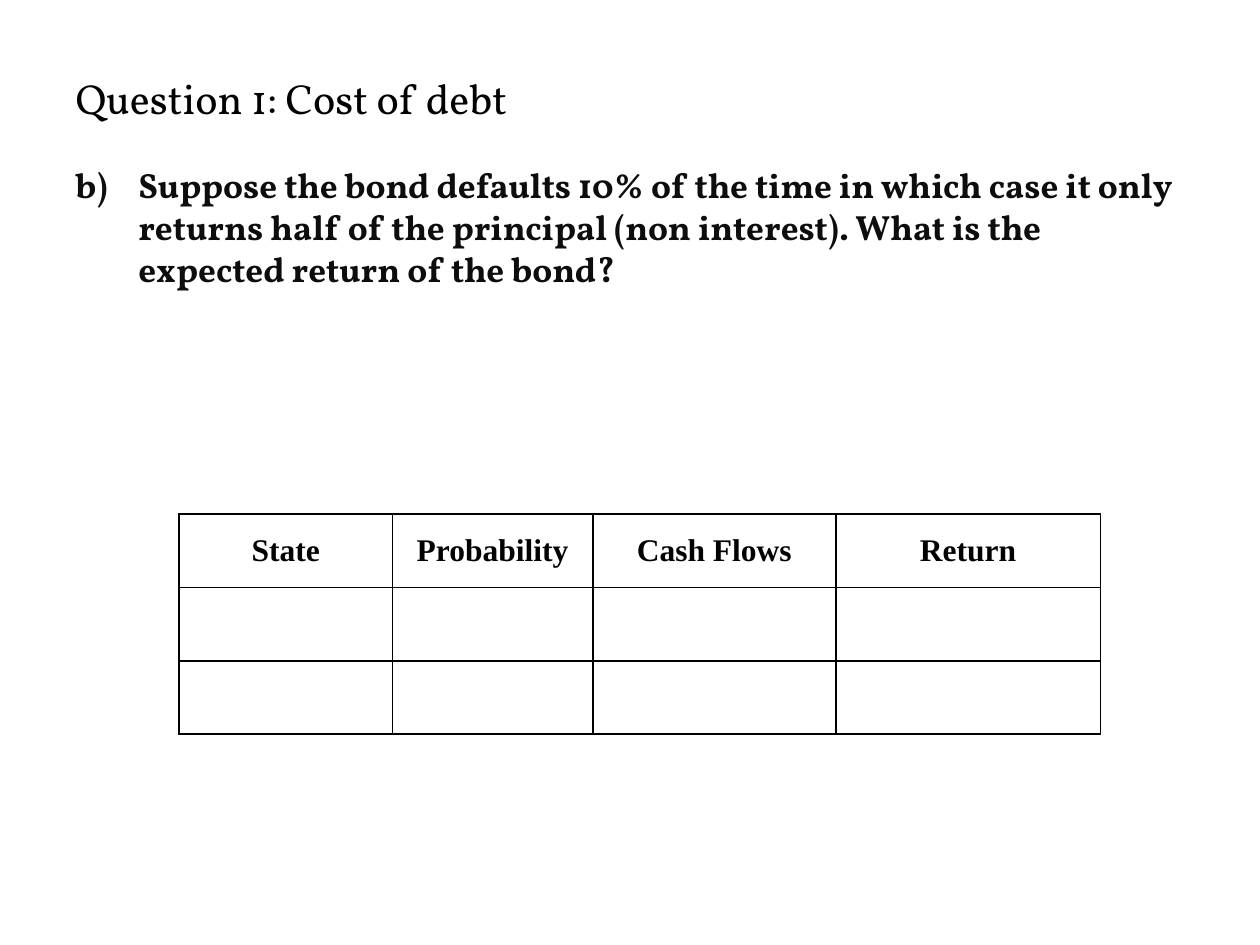
"""Build the cost of debt question slide with its blank answer table."""
from dataclasses import dataclass

from lxml.etree import SubElement
from pptx import Presentation
from pptx.dml.color import RGBColor
from pptx.enum.text import MSO_ANCHOR as Anchor, PP_ALIGN as Align
from pptx.oxml.ns import qn
from pptx.util import Cm, Pt

TITLE = "Question 1: Cost of debt"
QUESTION = (
    "Suppose the bond defaults 10% of the time in which case it only returns "
    "half of the principal (non interest). What is the expected return of the bond?"
)
QUESTION_NUMBER = 2
COLUMNS = [("State", 4.3), ("Probability", 4.04), ("Cash Flows", 4.9), ("Return", 5.33)]
ANSWER_ROWS = 2
ROW_HEIGHT = 1.48
MARGIN, CONTENT_WIDTH = 1.27, 22.86
TABLE_LEFT, TABLE_TOP = 3.61, 10.36


@dataclass(frozen=True)
class Theme:
    text_font: str = "Vollkorn"
    table_font: str = "Times New Roman"
    black: str = "000000"
    ink: str = "0D0D0D"
    title_size: int = 24
    question_size: int = 20
    table_size: int = 18
    border_width: int = 1


THEME = Theme()


def style(paragraph, font_name, size, color, bold):
    for run in paragraph.runs:
        font = run.font
        font.name, font.size, font.bold = font_name, Pt(size), bold
        font.color.rgb = RGBColor.from_string(color)


def number_question(paragraph):
    properties = paragraph._p.get_or_add_pPr()
    properties.set("marL", str(Cm(1.27)))
    properties.set("indent", str(-Cm(1.27)))
    SubElement(properties, qn("a:buFont"), typeface="+mj-lt")
    SubElement(properties, qn("a:buAutoNum"), type="alphaLcParenR", startAt=str(QUESTION_NUMBER))


def draw_borders(cell):
    properties = cell._tc.get_or_add_tcPr()
    for edge in ("a:lnL", "a:lnR", "a:lnT", "a:lnB"):
        border = SubElement(properties, qn(edge), w=str(Pt(THEME.border_width)))
        SubElement(SubElement(border, qn("a:solidFill")), qn("a:srgbClr"), val=THEME.black)


def add_title(slide):
    title = slide.shapes.title
    title.left, title.top = Cm(MARGIN), Cm(0.76)
    title.width, title.height = Cm(CONTENT_WIDTH), Cm(2.41)
    title.text_frame.text = TITLE
    title.text_frame.vertical_anchor = Anchor.MIDDLE
    heading = title.text_frame.paragraphs[0]
    heading.alignment = Align.LEFT
    style(heading, THEME.text_font, THEME.title_size, THEME.black, False)


def add_question(slide):
    body = slide.shapes.add_textbox(Cm(MARGIN), Cm(3.18), Cm(CONTENT_WIDTH), Cm(14.6))
    body.text_frame.word_wrap = True
    body.text_frame.text = QUESTION
    question = body.text_frame.paragraphs[0]
    question.space_before = Pt(THEME.question_size * 0.2)
    number_question(question)
    style(question, THEME.text_font, THEME.question_size, THEME.ink, True)


def add_answer_table(slide):
    row_count = ANSWER_ROWS + 1
    table_width = sum(width for _, width in COLUMNS)
    table = slide.shapes.add_table(
        row_count, len(COLUMNS), Cm(TABLE_LEFT), Cm(TABLE_TOP),
        Cm(table_width), Cm(ROW_HEIGHT * row_count),
    ).table
    table.horz_banding = False
    for row in table.rows:
        row.height = Cm(ROW_HEIGHT)
    for index, (header, width) in enumerate(COLUMNS):
        table.columns[index].width = Cm(width)
        table.cell(0, index).text_frame.text = header
    for cell in table.iter_cells():
        cell.margin_left = cell.margin_right = Cm(0.18)
        cell.margin_top = cell.margin_bottom = 0
        cell.vertical_anchor = Anchor.MIDDLE
        draw_borders(cell)
        cell.fill.background()
        label = cell.text_frame.paragraphs[0]
        label.alignment = Align.CENTER
        style(label, THEME.table_font, THEME.table_size, THEME.black, True)


def main():
    deck = Presentation()
    deck.slide_width, deck.slide_height = Cm(25.4), Cm(19.05)
    slide = deck.slides.add_slide(deck.slide_layouts[5])
    add_title(slide)
    add_question(slide)
    add_answer_table(slide)
    deck.save("out.pptx")


if __name__ == "__main__":
    main()
